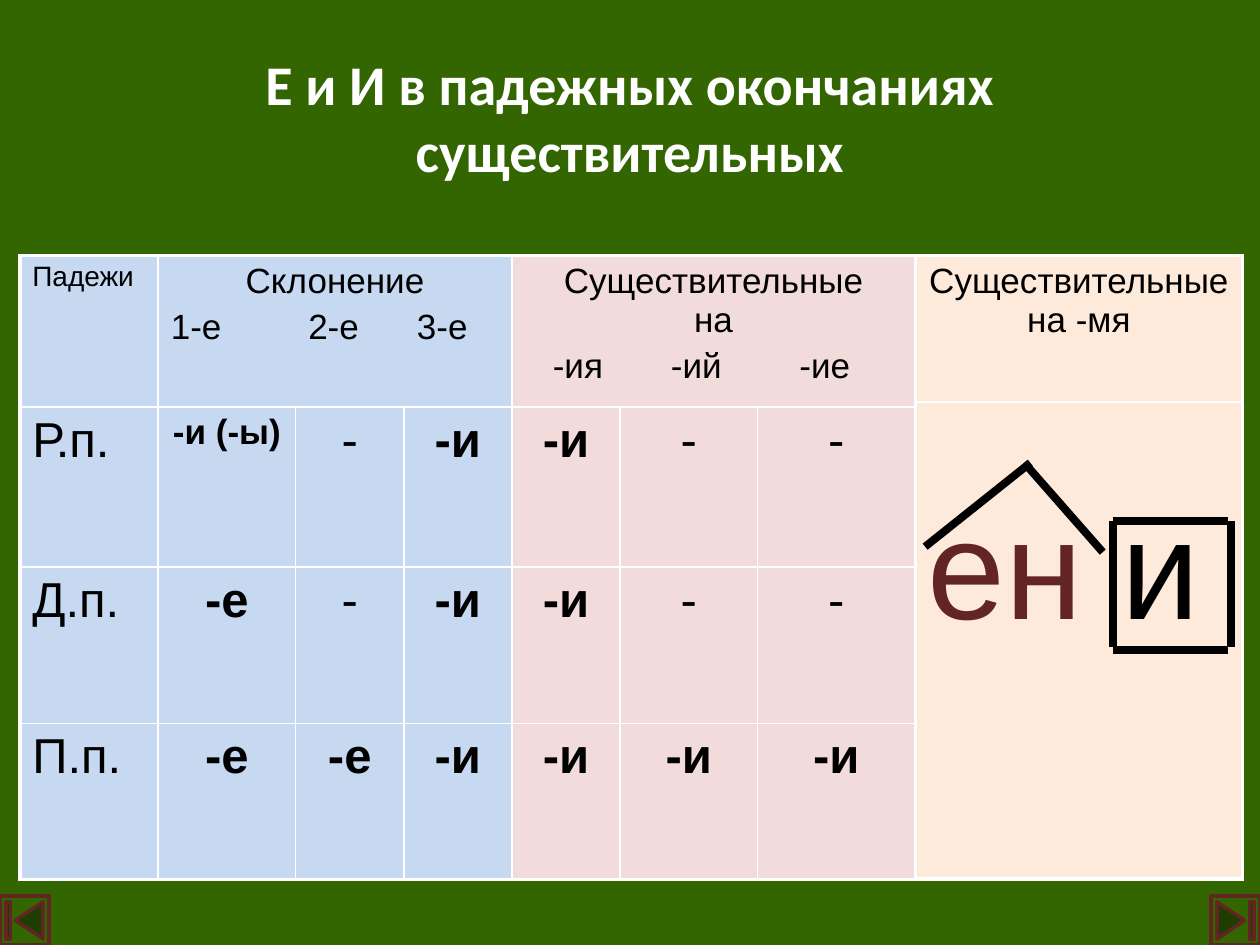
from dataclasses import dataclass
from lxml import etree
from pptx import Presentation
from pptx.dml.color import RGBColor as Rgb
from pptx.enum.shapes import MSO_CONNECTOR as Conn, MSO_SHAPE as Shape
from pptx.enum.text import MSO_ANCHOR as Anchor, PP_ALIGN as Align
from pptx.oxml.ns import qn
from pptx.util import Cm, Pt

HUES = {
    "green": "336600", "brown": "632523", "white": "FFFFFF", "black": "000000",
    "blue": "C6D9F1", "pink": "F2DCDB", "peach": "FDEADA",
}
LEFT, TOP, MID = 0.4, 5.15, 18.45  # table edges, cm
COLS = [2.79, 2.77, 2.18, 2.18, 2.18, 2.77, 3.18]
ROWS = [3.05, 3.23, 3.15, 3.15]
CASES = [
    ["Р.п.", "-и (-ы)", "-", "-и", "-и", "-", "-"],
    ["Д.п.", "-е", "-", "-и", "-и", "-", "-"],
    ["П.п.", "-е", "-е", "-и", "-и", "-и", "-и"],
]


@dataclass
class Head:
    col: int
    text: str
    ends: str
    stops: list[float]
    hue: str


@dataclass
class Line:
    x1: float
    y1: float
    x2: float
    y2: float


HEADS = [
    Head(1, "Склонение", "1-е\t2-е\t3-е", [2.77, 4.96], "blue"),
    Head(4, "Существительные\vна", "\t-ия\t-ий\t-ие", [0.57, 2.95, 5.54], "pink"),
]
ROOF = [Line(18.65, 11.02, 20.77, 9.33), Line(20.65, 9.33, 22.23, 11.13)]
BOX = [
    Line(22.43, 10.51, 24.75, 10.51), Line(22.43, 13.1, 24.75, 13.1),
    Line(22.43, 10.51, 22.43, 13.05), Line(24.82, 10.51, 24.82, 13.05),
]


def tint(name: str) -> Rgb:
    return Rgb.from_string(HUES[name])


def style(run, size: float, hue: str = "black", bold: bool = False,
          face: str = "Arial") -> None:
    font = run.font
    font.size, font.bold, font.name = Pt(size), bold, face
    font.color.rgb = tint(hue)


def write(cell, text: str, size: float, bold: bool = False, align=Align.CENTER):
    cell.text_frame.text = text
    para = cell.text_frame.paragraphs[0]
    para.alignment = align
    for run in para.runs:
        style(run, size, bold=bold)


def set_tabs(para, stops: list[float]) -> None:
    tabs = etree.SubElement(para._p.get_or_add_pPr(), qn("a:tabLst"))
    for stop in stops:
        etree.SubElement(tabs, qn("a:tab"), pos=str(Cm(stop)), algn="l")


def edge(cell, side: str, width: float) -> None:
    line = etree.SubElement(cell._tc.get_or_add_tcPr(), qn(f"a:ln{side}"),
                            w=str(Pt(width)))
    fill = etree.SubElement(line, qn("a:solidFill"))
    etree.SubElement(fill, qn("a:srgbClr"), val=HUES["white"])


def add_grid(slide, left: float, cols: list[float], rows: list[float], hues: list[str]):
    """Table with thick outer and thin inner borders, one hue per column."""
    grid = slide.shapes.add_table(len(rows), len(cols), Cm(left), Cm(TOP),
                                  Cm(sum(cols)), Cm(sum(rows))).table
    grid.first_row = grid.horz_banding = False
    for col, width in zip(grid.columns, cols):
        col.width = Cm(width)
    for row, height in zip(grid.rows, rows):
        row.height = Cm(height)
    for r in range(len(rows)):
        for c, hue in enumerate(hues):
            cell = grid.cell(r, c)
            outer = {"L": c == 0, "R": c == len(cols) - 1,
                     "T": r == 0, "B": r == len(rows) - 1}
            for side, thick in outer.items():
                edge(cell, side, 2.25 if thick else 1)
            cell.fill.solid()
            cell.fill.fore_color.rgb = tint(hue)
    return grid


def add_line(slide, line: Line) -> None:
    bar = slide.shapes.add_connector(Conn.STRAIGHT, Cm(line.x1), Cm(line.y1),
                                     Cm(line.x2), Cm(line.y2))
    bar.line.color.rgb = tint("black")
    bar.line.width = Pt(4.5)
    etree.SubElement(bar._element.spPr, qn("a:effectLst"))


def add_button(slide, left: float, turn: float) -> None:
    key = slide.shapes.add_shape(Shape.ACTION_BUTTON_BEGINNING, Cm(left), Cm(18.06),
                                 Cm(0.99), Cm(0.99))
    key.rotation = turn
    key.shadow.inherit = False
    key.fill.solid()
    key.fill.fore_color.rgb = tint("green")
    key.line.color.rgb = tint("brown")
    key.line.width = Pt(2)


def add_title(slide, text: str) -> None:
    frame = slide.shapes.add_textbox(Cm(1.27), Cm(0.76), Cm(22.86), Cm(3.18)).text_frame
    frame.word_wrap = True
    frame.vertical_anchor = Anchor.MIDDLE
    frame.text = text
    para = frame.paragraphs[0]
    para.alignment = Align.CENTER
    style(para.runs[0], 32, "white", True, "Calibri")


def add_cases(slide) -> None:
    grid = add_grid(slide, LEFT, COLS, ROWS, ["blue"] * 4 + ["pink"] * 3)
    write(grid.cell(0, 0), "Падежи", 16, align=Align.LEFT)
    for head in HEADS:
        cell = grid.cell(0, head.col)
        cell.merge(grid.cell(0, head.col + 2))
        write(cell, head.text, 20)
        para = cell.text_frame.add_paragraph()
        para.text = head.ends
        para.space_before = Pt(4)
        set_tabs(para, head.stops)
        style(para.runs[0], 20)
    for r, case in enumerate(CASES, 1):
        for c, text in enumerate(case):
            write(grid.cell(r, c), text, 20 if "(" in text else 28,
                  bold=c > 0 and text != "-", align=Align.CENTER if c else Align.LEFT)


def add_nouns(slide) -> None:
    grid = add_grid(slide, MID, [6.6], [2.95, 9.62], ["peach"])
    write(grid.cell(0, 0), "Существительные на -мя", 20)
    cell = grid.cell(1, 0)
    cell.margin_top = Cm(1.83)
    para = cell.text_frame.paragraphs[0]
    for text, hue in (("ен ", "brown"), ("и", "black")):
        run = para.add_run()
        run.text = text
        style(run, 80, hue)


def main() -> None:
    deck = Presentation()
    deck.slide_width, deck.slide_height = Cm(25.4), Cm(19.05)
    slide = deck.slides.add_slide(deck.slide_layouts[6])
    slide.background.fill.solid()
    slide.background.fill.fore_color.rgb = tint("green")

    # Navigation buttons
    add_button(slide, 0, 0)
    add_button(slide, 24.41, 180)

    # Title and tables
    add_title(slide, "Е и И в падежных окончаниях существительных")
    add_cases(slide)
    add_nouns(slide)

    # Suffix roof and ending box
    for line in ROOF + BOX:
        add_line(slide, line)
    deck.save("out.pptx")


if __name__ == "__main__":
    main()
